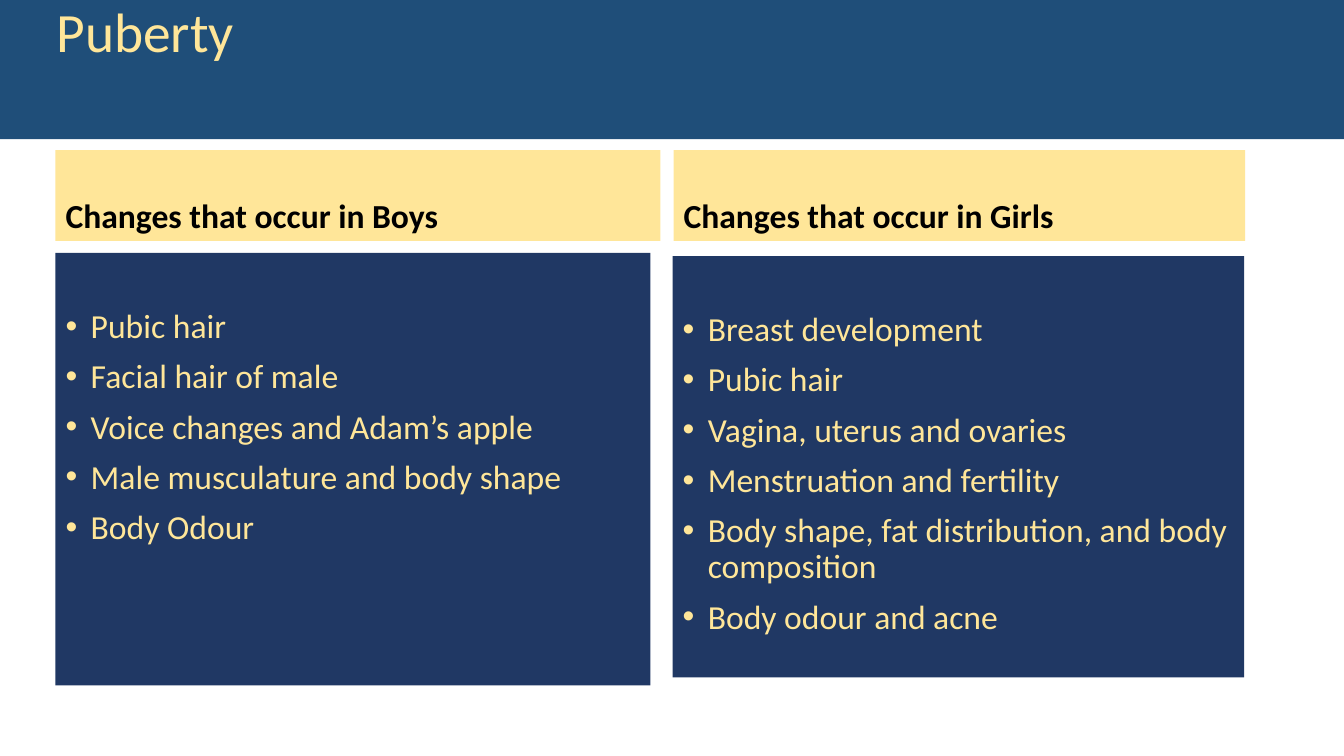
from dataclasses import dataclass

from lxml import etree
from pptx import Presentation
from pptx.dml.color import RGBColor
from pptx.enum.text import MSO_ANCHOR, MSO_AUTO_SIZE, PP_ALIGN
from pptx.oxml.ns import qn
from pptx.util import Inches, Pt

TOP, BOTTOM = MSO_ANCHOR.TOP, MSO_ANCHOR.BOTTOM
LEFT = PP_ALIGN.LEFT
NO_FIT = MSO_AUTO_SIZE.NONE
COLORS = {"blue": "1F4E79", "navy": "203864", "cream": "FFE699", "black": "000000"}


@dataclass
class Panel:
    slot: int
    box: tuple[float, float, float, float]
    fill: str
    ink: str
    lines: list[str]
    size: float = 24
    bold: bool = False
    bullet: bool = False
    anchor: MSO_ANCHOR = TOP
    inset: tuple[float, float] = (0.1, 0.05)


def heading(slot: int, left: float, width: float, text: str) -> Panel:
    return Panel(slot, (left, 1.49, width, 0.9), "cream", "black", [text],
                 bold=True, anchor=BOTTOM)


def listing(slot: int, box: tuple[float, float, float, float], lines: list[str]) -> Panel:
    return Panel(slot, box, "navy", "cream", lines, bullet=True, inset=(0.1, 0.56))


def add_bullet(para) -> None:
    props = para._p.get_or_add_pPr()
    props.set("marL", str(Inches(0.25)))
    props.set("indent", str(-Inches(0.25)))
    etree.SubElement(props, qn("a:buFont")).set("typeface", "Arial")
    etree.SubElement(props, qn("a:buChar")).set("char", "•")


def draw(slide, panel: Panel) -> None:
    shape = slide.placeholders[panel.slot]
    shape.left, shape.top, shape.width, shape.height = map(Inches, panel.box)
    shape.fill.solid()
    shape.fill.fore_color.rgb = RGBColor.from_string(COLORS[panel.fill])
    frame = shape.text_frame
    frame.text = "\n".join(panel.lines)
    frame.word_wrap = True
    frame.auto_size = NO_FIT
    frame.vertical_anchor = panel.anchor
    frame.margin_left, frame.margin_top = map(Inches, panel.inset)
    for i, para in enumerate(frame.paragraphs):
        if panel.bullet:
            add_bullet(para)
        para.alignment = LEFT
        para.line_spacing = 0.9
        para.space_before = Pt(10 if i else 0)
        for run in para.runs:
            run.font.name = "Calibri"
            run.font.size = Pt(panel.size)
            run.font.bold = panel.bold
            run.font.color.rgb = RGBColor.from_string(COLORS[panel.ink])


PANELS = [
    Panel(0, (0, 0, 13.33, 1.38), "blue", "cream", ["Puberty"],
          size=39.6, inset=(0.56, 0.05)),
    heading(1, 0.55, 6, "Changes that occur in Boys"),
    listing(2, (0.55, 2.51, 5.9, 4.29), [
        "Pubic hair",
        "Facial hair of male",
        "Voice changes and Adam’s apple",
        "Male musculature and body shape",
        "Body Odour",
    ]),
    heading(3, 6.68, 5.67, "Changes that occur in Girls"),
    listing(4, (6.67, 2.54, 5.67, 4.18), [
        "Breast development",
        "Pubic hair",
        "Vagina, uterus and ovaries",
        "Menstruation and fertility",
        "Body shape, fat distribution, and body composition",
        "Body odour and acne",
    ]),
]


def main() -> None:
    deck = Presentation()
    deck.slide_width, deck.slide_height = Inches(13.33), Inches(7.5)
    slide = deck.slides.add_slide(deck.slide_layouts.get_by_name("Comparison"))
    for panel in PANELS:
        draw(slide, panel)
    deck.save("out.pptx")


if __name__ == "__main__":
    main()
